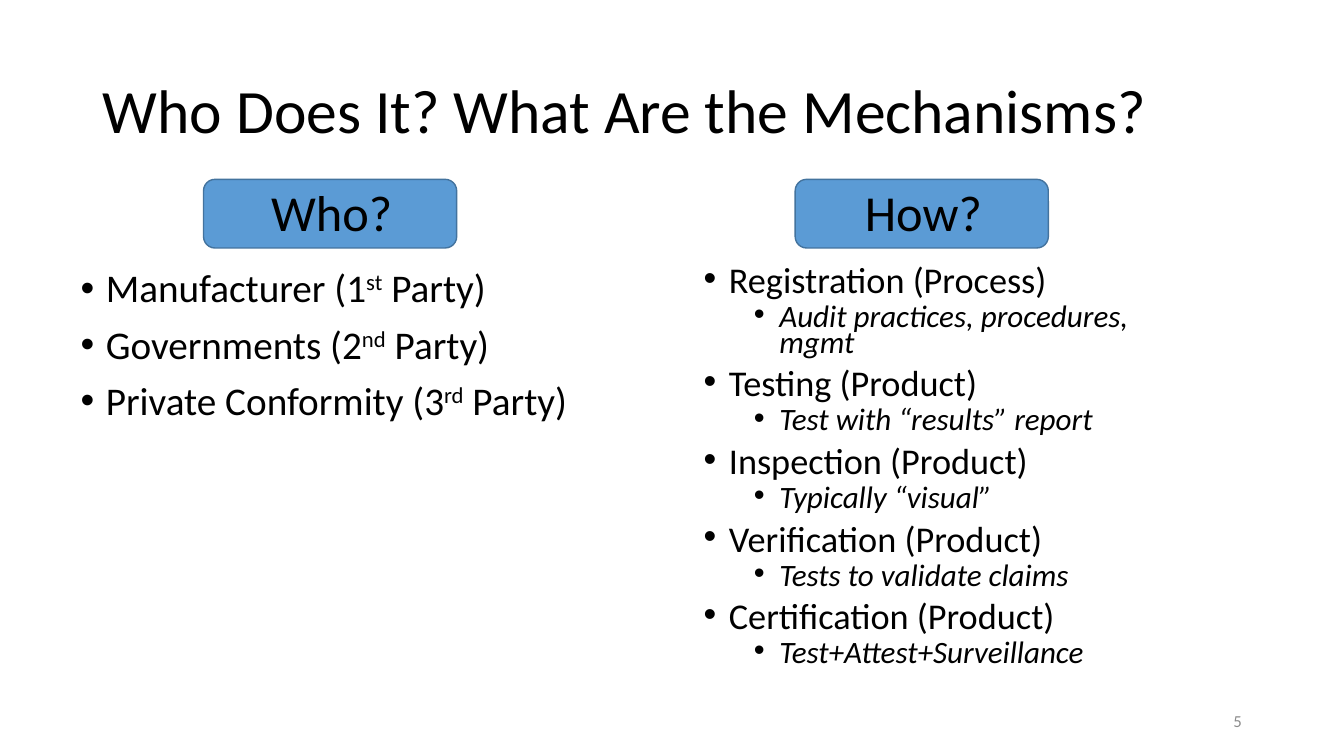
import pptx
import pptx.util
import pptx.dml.color
import pptx.enum.shapes
import pptx.enum.text
import lxml.etree
from dataclasses import dataclass
from pptx.util import Cm

TITLE = "Who Does It? What Are the Mechanisms?"
PAGE = "5"
PARTIES = [
    ("Manufacturer (1", "st", " Party)"),
    ("Governments (2", "nd", " Party)"),
    ("Private Conformity (3", "rd", " Party)"),
]
MECHANISMS = [
    ("Registration (Process)", "Audit practices, procedures, mgmt"),
    ("Testing (Product)", "Test with “results” report"),
    ("Inspection (Product)", "Typically “visual”"),
    ("Verification (Product)", "Tests to validate claims"),
    ("Certification (Product)", "Test+Attest+Surveillance"),
]


@dataclass(frozen=True)
class Theme:
    font: str = "Calibri"
    ink: str = "000000"
    muted: str = "8C8C8C"
    badge: str = "5B9BD5"
    badge_line: str = "43739E"
    title: float = 44
    heading: float = 36
    body: float = 28
    item: float = 25.9
    detail: float = 22.2
    page: float = 12


THEME = Theme()
ALIGN = pptx.enum.text.PP_ALIGN
ANCHOR = pptx.enum.text.MSO_ANCHOR
BULLET_INDENT = Cm(0.64)
LEVEL_INDENT = Cm(1.27)


def rgb(value):
    return pptx.dml.color.RGBColor.from_string(value)


def add_box(slide, left, top, width, height, anchor=ANCHOR.TOP):
    tf = slide.shapes.add_textbox(left, top, width, height).text_frame
    tf.word_wrap = True
    tf.vertical_anchor = anchor
    return tf


def add_text(tf, parts, size, color=THEME.ink, italic=False, align=ALIGN.LEFT,
             spacing=1.0, before=0, level=0, bullet=False):
    p = tf.paragraphs[0]
    if p.runs:
        p = tf.add_paragraph()
    p.alignment = align
    p.line_spacing = spacing
    p.space_before = pptx.util.Pt(before)
    p.level = level
    if bullet:
        pPr = p._p.get_or_add_pPr()
        pPr.set("marL", str(BULLET_INDENT + level * LEVEL_INDENT))
        pPr.set("indent", str(-BULLET_INDENT))
        for tag, key, value in (("a:buFont", "typeface", "Arial"), ("a:buChar", "char", "•")):
            mark = lxml.etree.SubElement(pPr, pptx.oxml.ns.qn(tag))
            mark.set(key, value)
    for i, text in enumerate(parts):
        r = p.add_run()
        r.text = text
        r.font.name = THEME.font
        r.font.size = pptx.util.Pt(size)
        r.font.italic = italic
        r.font.color.rgb = rgb(color)
        if i % 2:
            r._r.get_or_add_rPr().set("baseline", "30000")


def add_badge(slide, left, label):
    sp = slide.shapes.add_shape(pptx.enum.shapes.MSO_SHAPE.ROUNDED_RECTANGLE,
                                left, Cm(4.52), Cm(6.38), Cm(1.73))
    sp.shadow.inherit = False
    sp.fill.solid()
    sp.fill.fore_color.rgb = rgb(THEME.badge)
    sp.line.color.rgb = rgb(THEME.badge_line)
    sp.line.width = pptx.util.Pt(1)
    tf = add_box(slide, left + Cm(0.69), Cm(4.45), Cm(5.08), Cm(1.8))
    add_text(tf, [label], THEME.heading, align=ALIGN.CENTER)


def add_column(slide, left):
    return add_box(slide, left, Cm(6.65), Cm(13.18), Cm(10.44))


def main():
    prs = pptx.Presentation()
    prs.slide_width, prs.slide_height = Cm(33.87), Cm(19.05)
    s = prs.slides.add_slide(prs.slide_layouts[6])

    title = add_box(s, Cm(2.34), Cm(1.02), Cm(29.21), Cm(3.68), ANCHOR.MIDDLE)
    add_text(title, [TITLE], THEME.title, spacing=0.9)

    add_badge(s, Cm(5.13), "Who?")
    who = add_column(s, Cm(1.78))
    for parts in PARTIES:
        add_text(who, parts, THEME.body, spacing=0.9, before=10, bullet=True)

    add_badge(s, Cm(20.04), "How?")
    how = add_column(s, Cm(17.48))
    for item, detail in MECHANISMS:
        add_text(how, [item], THEME.item, spacing=0.7, before=10, bullet=True)
        add_text(how, [detail], THEME.detail, italic=True, spacing=0.7, before=5,
                 level=1, bullet=True)

    page = add_box(s, Cm(23.93), Cm(17.65), Cm(7.62), Cm(1.02), ANCHOR.MIDDLE)
    add_text(page, [PAGE], THEME.page, color=THEME.muted, align=ALIGN.RIGHT)
    prs.save("out.pptx")


if __name__ == "__main__":
    main()
